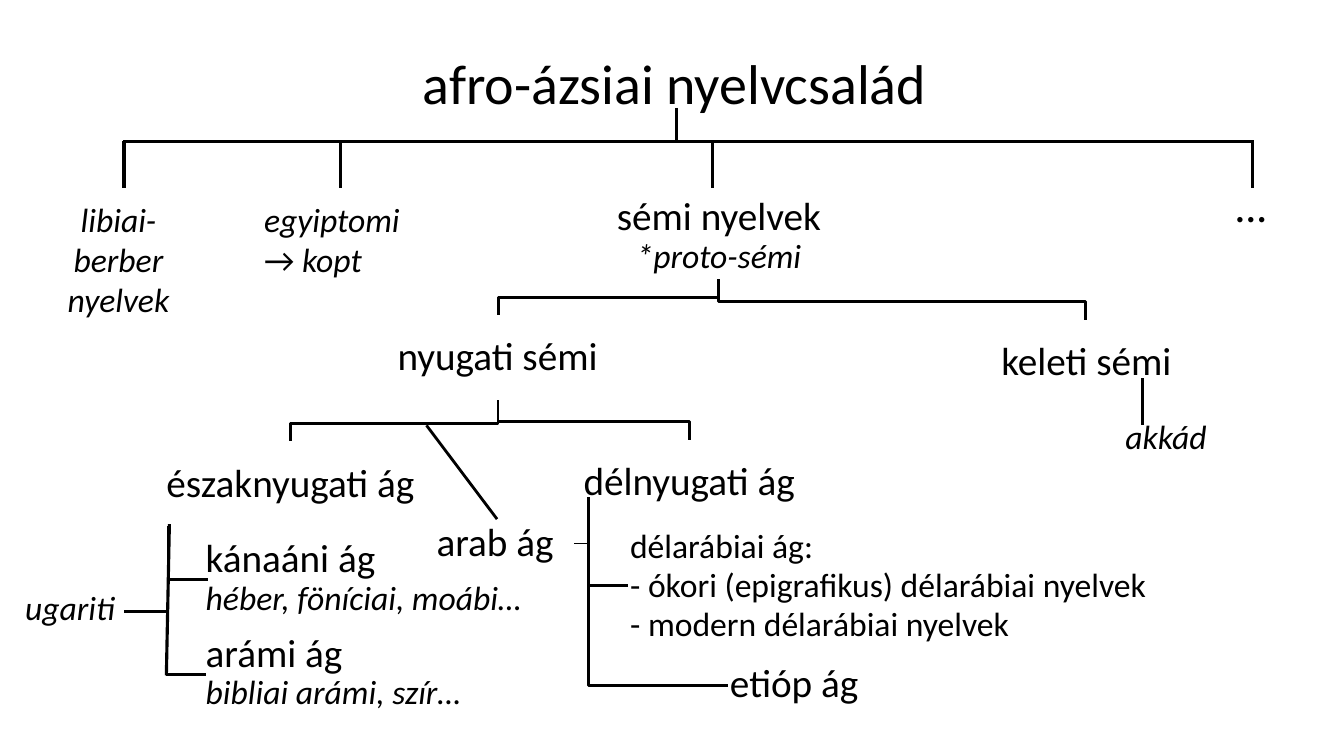
from pptx import Presentation
from pptx.dml.color import RGBColor
from pptx.enum import shapes, text
from pptx.oxml import ns, xmlchemy
from pptx.util import Inches, Pt

BLACK = RGBColor(0, 0, 0)
WHITE = RGBColor(255, 255, 255)
FONT = "Calibri"
LEFT, CENTER = text.PP_ALIGN.LEFT, text.PP_ALIGN.CENTER
BRANCH, LANGUAGE = 28, 24


class TreeSlide:
    """Black family tree on one white slide."""

    def __init__(self, deck):
        self.slide = deck.slides.add_slide(deck.slide_layouts[5])
        self.slide.background.fill.solid()
        self.slide.background.fill.fore_color.rgb = WHITE

    def set_font(self, font, size, italic=False):
        font.name, font.size, font.italic = FONT, Pt(size), italic
        font.color.rgb = BLACK

    def title(self, wording, box, size):
        title = self.slide.shapes.title
        title.left, title.top, title.width, title.height = map(Inches, box)
        title.text_frame.text = wording
        title.text_frame.auto_size = text.MSO_AUTO_SIZE.NONE
        title.text_frame.vertical_anchor = text.MSO_ANCHOR.TOP
        title.text_frame.paragraphs[0].alignment = CENTER
        self.set_font(title.text_frame.paragraphs[0].font, size)

    def frame(self, box):
        frame = self.slide.shapes.add_textbox(*map(Inches, box)).text_frame
        frame.word_wrap = True
        return frame

    def label(self, wording, box, size=LANGUAGE, align=LEFT):
        """Free italic label; arrows stay upright."""
        frame = self.frame(box)
        frame.auto_size = text.MSO_AUTO_SIZE.SHAPE_TO_FIT_TEXT
        frame.text = wording
        for line in frame.paragraphs:
            line.alignment = align
            self.set_font(line.font, size, italic=True)
            if line.text.startswith("→ "):
                line.runs[0].text = "→ "
                line.runs[0].font.italic = False
                line.add_run().text = wording.split("→ ")[1]

    def node(self, box, branch="", languages="", align=CENTER, listing=()):
        """Tree node: a branch name over its languages, or a listing."""
        frame = self.frame(box)
        frame.vertical_anchor = text.MSO_ANCHOR.MIDDLE
        frame.margin_left = frame.margin_right = Inches(0.02)
        frame.margin_top = frame.margin_bottom = Inches(0.02)
        frame.text = "\n".join(listing)
        for line in frame.paragraphs:
            line.alignment, line.line_spacing = align, 0.9
            self.set_font(line.font, LANGUAGE if listing else BRANCH)
            if listing:
                line.space_after = Pt(2)
        name = frame.paragraphs[0]
        if branch:
            name.add_run().text = branch
        if branch and languages:
            name.add_line_break()
        if languages:
            run = name.add_run()
            run.text = languages
            self.set_font(run.font, LANGUAGE, italic=True)

    def elbow(self, points, width):
        corners = [(Inches(x), Inches(y)) for x, y in points]
        builder = self.slide.shapes.build_freeform(*corners[0])
        builder.add_line_segments(corners[1:], close=False)
        shape = builder.convert_to_shape()
        shape.shadow.inherit = False
        shape.fill.background()
        shape.line.color.rgb, shape.line.width = BLACK, Pt(width)

    def line(self, x1, y1, x2, y2, width=2.25):
        line = self.slide.shapes.add_connector(
            shapes.MSO_CONNECTOR.STRAIGHT, *map(Inches, (x1, y1, x2, y2)))
        line.line.color.rgb, line.line.width = BLACK, Pt(width)
        line._element.spPr.append(xmlchemy.OxmlElement("a:effectLst"))


def draw_family(tree):
    tree.title("afro-ázsiai nyelvcsalád", (4.05, 0.43, 5.28, 0.77), 40)
    bar = 1.4
    tree.line(1.22, bar, 12.44, bar)
    tree.line(6.71, 1.07, 6.71, 1.42)
    for x in (1.23, 3.38, 7.07, 12.42):
        tree.line(x, bar, x, 1.87)
    tree.label("libiai-berber nyelvek", (0.52, 1.92, 1.31, 1.31), align=CENTER)
    tree.label("egyiptomi\n→ kopt", (2.52, 1.92, 1.72, 0.91))
    tree.label("…", (12.06, 1.71, 0.71, 0.64), 32, CENTER)


def draw_semitic(tree):
    # Each fork: parent x, parent y, bar y, child x, child y
    for x, top, bar, child, bottom in (
            (7.13, 2.77, 2.99, 10.77, 3.17), (7.13, 2.77, 2.95, 4.94, 3.12),
            (4.94, 3.97, 4.18, 6.84, 4.36), (4.94, 3.97, 4.2, 2.88, 4.38)):
        tree.elbow([(x, top), (x, bar), (child, bar), (child, bottom)], 2)
    # Each side branch: stem x, stem top, branch y, branch end x, width
    for x, top, y, end, width in (
            (5.84, 5.21, 6.8, 7.22, 2.25), (5.84, 5.21, 5.81, 6.23, 1),
            (5.84, 5.21, 5.39, 5.69, 1), (1.66, 5.22, 6.68, 2.02, 1),
            (1.66, 5.22, 5.74, 2.02, 1)):
        tree.elbow([(x, top), (x, y), (end, y)], width)

    tree.node((5.52, 1.92, 3.22, 0.85), "sémi nyelvek", "*proto-sémi")
    tree.node((3.35, 3.12, 3.17, 0.85), "nyugati sémi")
    tree.node((9.13, 3.17, 3.29, 0.85), "keleti sémi")
    tree.node((10.72, 3.93, 1.69, 0.85), languages="akkád")
    tree.line(11.33, 3.75, 11.33, 4.22, 2.5)
    tree.node((1.35, 4.38, 3.06, 0.85), "északnyugati ág")
    tree.node((5.59, 4.36, 2.49, 0.85), "délnyugati ág")
    tree.node((4.31, 5.1, 1.39, 0.58), "arab ág", align=LEFT)
    tree.line(4.23, 4.22, 4.93, 5.15, 2)


def draw_northwest(tree):
    tree.node((2.02, 5.31, 3.32, 0.85), "kánaáni ág",
              "héber, föníciai, moábi…", LEFT)
    tree.node((2.02, 6.25, 3.26, 0.85), "arámi ág",
              "bibliai arámi, szír…", LEFT)
    tree.label("ugariti", (0.15, 5.77, 1.23, 0.5))
    tree.line(1.65, 6.7, 1.68, 5.2)
    tree.line(1.23, 6.07, 1.67, 6.07)
    tree.line(1.66, 5.75, 2.06, 5.75)
    tree.line(1.65, 6.69, 2.04, 6.69)


def draw_southwest(tree):
    tree.node((6.23, 5.39, 5.33, 0.85), align=LEFT, listing=(
        "délarábiai ág:", "- ókori (epigrafikus) délarábiai nyelvek",
        "- modern délarábiai nyelvek"))
    tree.node((7.22, 6.41, 1.69, 0.77), "etióp ág", align=LEFT)
    tree.line(5.84, 6.02, 5.84, 4.93)
    tree.line(5.84, 5.81, 6.23, 5.81)


def main():
    deck = Presentation()
    deck.slide_width, deck.slide_height = Inches(13.33), Inches(7.5)
    tree = TreeSlide(deck)
    draw_family(tree)
    draw_semitic(tree)
    draw_northwest(tree)
    draw_southwest(tree)
    deck.save("out.pptx")


if __name__ == "__main__":
    main()
